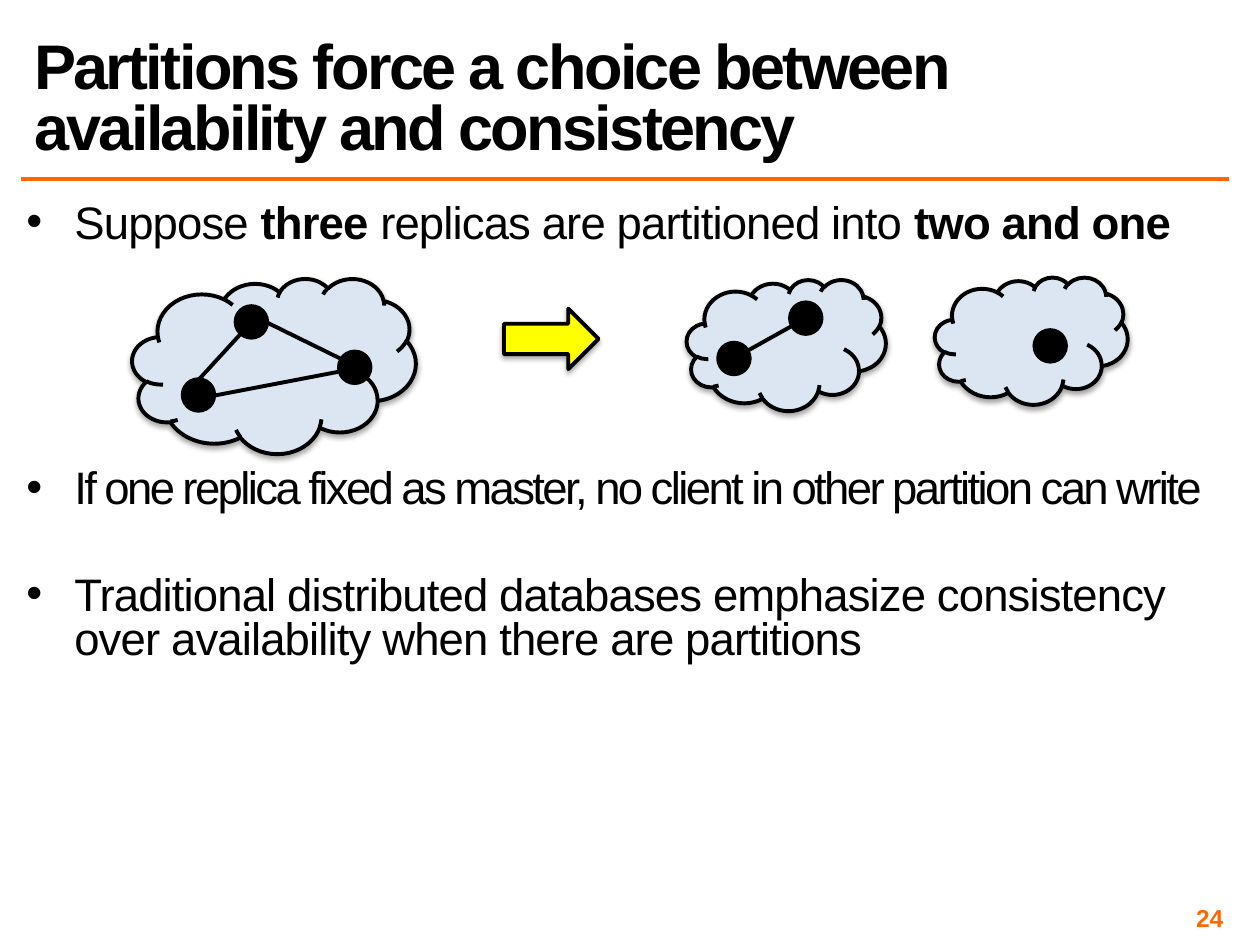
from lxml.etree import SubElement
from pptx import Presentation
from pptx.dml.color import RGBColor
from pptx.enum.shapes import MSO_CONNECTOR, MSO_SHAPE
from pptx.enum.text import MSO_ANCHOR, MSO_AUTO_SIZE, PP_ALIGN
from pptx.oxml.ns import qn
from pptx.util import Inches, Pt

COLORS = {"text": "000000", "accent": "FF6600", "cloud": "DCE6F2", "arrow": "FFFF00"}
OUTLINE = 2.25

prs = Presentation()
prs.slide_width, prs.slide_height = Inches(10), Inches(7.5)
slide = prs.slides.add_slide(prs.slide_layouts[5])
shapes = slide.shapes


def add_run(paragraph, text, size, color="text", bold=False, spacing=0):
    run = paragraph.add_run()
    run.text = text
    run.font.name = "Arial"
    run.font.size = Pt(size)
    run.font.bold = bold
    run.font.color.rgb = RGBColor.from_string(COLORS[color])
    if spacing:
        run.font._element.set("spc", str(int(spacing * 100)))


def add_line(x1, y1, x2, y2, color="text", width=OUTLINE):
    line = shapes.add_connector(
        MSO_CONNECTOR.STRAIGHT, Inches(x1), Inches(y1), Inches(x2), Inches(y2))
    line.line.color.rgb = RGBColor.from_string(COLORS[color])
    line.line.width = Pt(width)
    SubElement(line._element.spPr, qn("a:effectLst"))


title = shapes.title
title.left, title.top = Inches(0.17), Inches(0.17)
title.width, title.height = Inches(9.58), Inches(1.17)
heading = title.text_frame
heading.word_wrap = True
heading.auto_size = MSO_AUTO_SIZE.NONE
heading.vertical_anchor = MSO_ANCHOR.BOTTOM
heading.paragraphs[0].alignment = PP_ALIGN.LEFT
heading.paragraphs[0].line_spacing = 0.8
heading.paragraphs[0].space_before = Pt(0)
add_run(heading.paragraphs[0],
        "Partitions force a choice between availability and consistency",
        36, bold=True, spacing=-1.5)
add_line(0.17, 1.42, 9.75, 1.42, "accent", 2)

points = [
    (6, -0.5, [("Suppose ", False), ("three", True),
               (" replicas are partitioned into ", False), ("two and one", True)]),
    (127, -1.5, [("If one replica fixed as master, no client in other partition can write", False)]),
    (36, -0.5, [("Traditional distributed databases emphasize consistency "
                 "over availability when there are partitions", False)]),
]
body = shapes.add_textbox(Inches(0.17), Inches(1.58), Inches(9.58), Inches(5.5)).text_frame
number = shapes.add_textbox(Inches(7.42), Inches(7.17), Inches(2.33), Inches(0.23)).text_frame
for frame in (body, number):
    frame.word_wrap = True
    frame.margin_left = frame.margin_right = Inches(0.04)
    frame.margin_top = frame.margin_bottom = Inches(0.04)

for index, (space_before, spacing, parts) in enumerate(points):
    point = body.add_paragraph() if index else body.paragraphs[0]
    point.line_spacing = 0.8
    point.space_before = Pt(space_before)
    properties = point._p.get_or_add_pPr()
    properties.set("marL", str(Inches(0.38)))
    properties.set("indent", str(Inches(-0.38)))
    SubElement(properties, qn("a:buFont"), typeface="Arial")
    SubElement(properties, qn("a:buChar"), char="•")
    for text, bold in parts:
        add_run(point, text, 26, bold=bold, spacing=spacing)

number.vertical_anchor = MSO_ANCHOR.MIDDLE
number.paragraphs[0].alignment = PP_ALIGN.RIGHT
add_run(number.paragraphs[0], "24", 14, "accent", bold=True)

clouds_and_arrow = [
    (MSO_SHAPE.CLOUD, "cloud", 1.05, 2.21, 2.25, 1.39),
    (MSO_SHAPE.RIGHT_ARROW, "arrow", 4, 2.45, 0.75, 0.48),
    (MSO_SHAPE.CLOUD, "cloud", 5.45, 2.22, 1.58, 1.04),
    (MSO_SHAPE.CLOUD, "cloud", 7.42, 2.2, 1.53, 1.01),
]
replicas = [
    (MSO_SHAPE.OVAL, "text", x, y, 0.25, 0.25)
    for x, y in [(1.45, 3.01), (1.87, 2.43), (2.69, 2.79),
                 (5.7, 2.72), (6.27, 2.4), (8.21, 2.62)]
]
for kind, fill, x, y, width, height in clouds_and_arrow + replicas:
    part = shapes.add_shape(kind, Inches(x), Inches(y), Inches(width), Inches(height))
    part.fill.solid()
    part.fill.fore_color.rgb = RGBColor.from_string(COLORS[fill])
    part.line.color.rgb = RGBColor.from_string(COLORS["text"])
    part.line.width = Pt(OUTLINE)
    part.shadow.inherit = False
    if kind != MSO_SHAPE.OVAL:
        effects = part._element.spPr.find(qn("a:effectLst"))
        shadow = SubElement(effects, qn("a:outerShdw"), blurRad=str(Pt(3.1)),
                            dist=str(Pt(1.8)), dir="5400000", rotWithShape="0")
        shade = SubElement(shadow, qn("a:srgbClr"), val=COLORS["text"])
        SubElement(shade, qn("a:alpha"), val="35000")

links = [
    (1.58, 3.01, 1.91, 2.65),
    (1.7, 3.14, 2.69, 2.95),
    (2.12, 2.56, 2.71, 2.85),
    (5.94, 2.78, 6.28, 2.59),
]
for link in links:
    add_line(*link)

prs.save("out.pptx")
